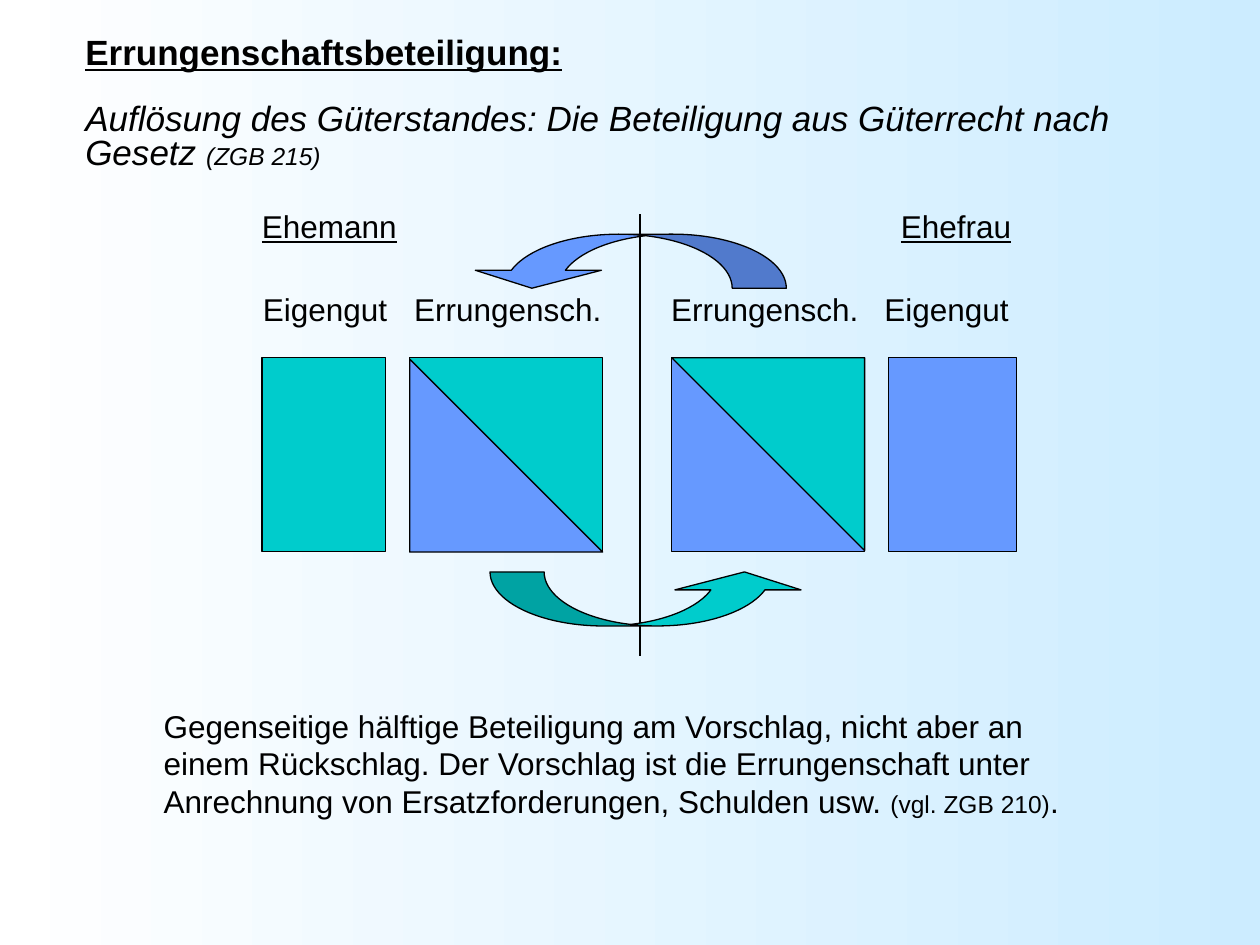
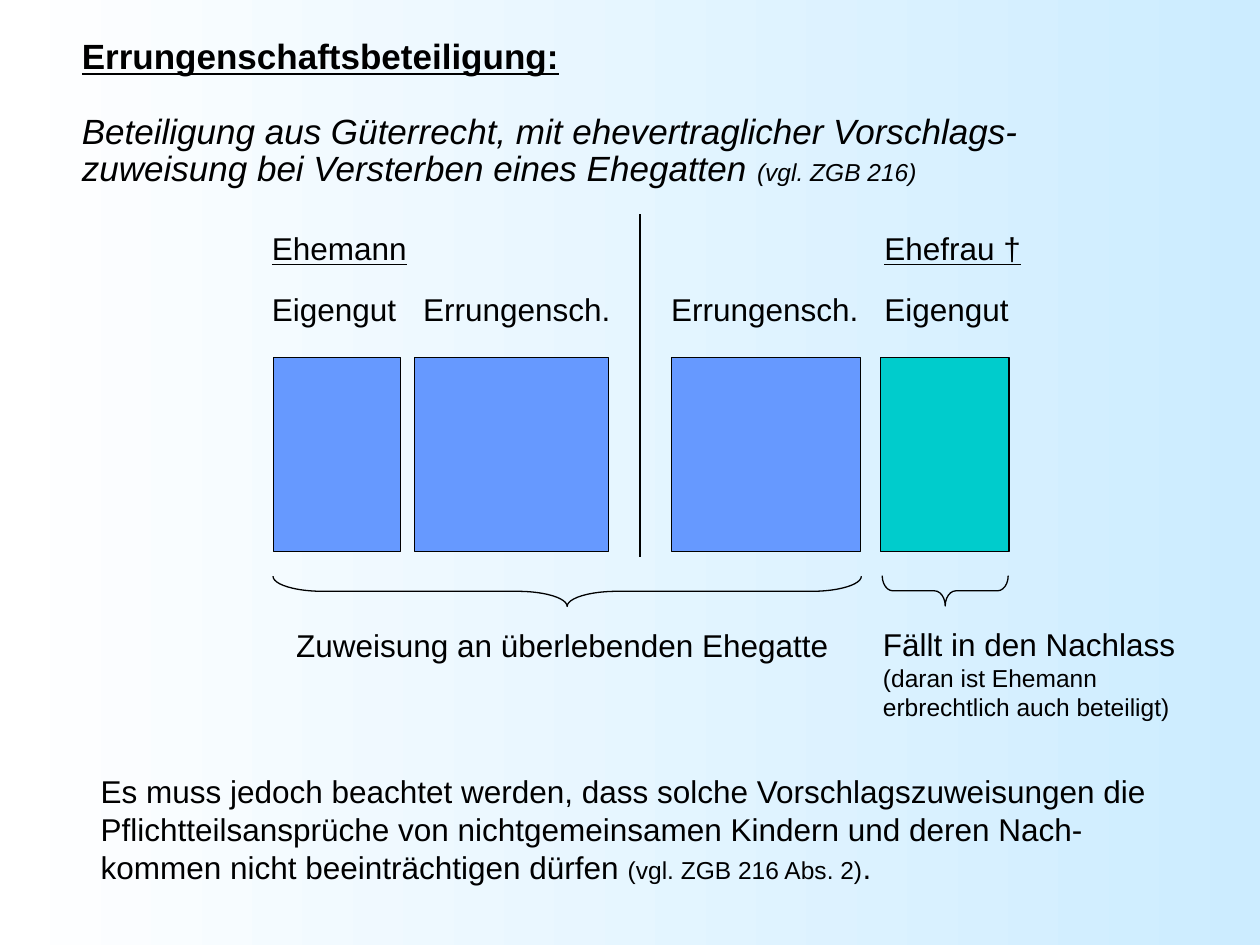
from lxml import etree
from pptx import Presentation
from pptx import util as u
from pptx.dml.color import RGBColor
from pptx.enum import shapes, text
from pptx.oxml.ns import qn

BLACK = RGBColor(0x00, 0x00, 0x00)
WHITE = RGBColor(0xFF, 0xFF, 0xFF)
PALE_BLUE = RGBColor(0xCC, 0xEC, 0xFF)
TEAL = RGBColor(0x00, 0xCC, 0xCC)
BLUE = RGBColor(0x66, 0x99, 0xFF)

FONT = "Arial"
TITLE_SIZE, BODY_SIZE, SMALL_SIZE = 20, 18, 14
LINE_WIDTH = u.Pt(0.75)
ESTATE_TOP, ESTATE_HEIGHT = 7.21, 3.91
LABEL_TOP, LABEL_HEIGHT = 5.72, 1.02
DIVIDER_X, DIVIDER_TOP = 12.9, 4.32
ESTATE_NAMES = ["Eigengut", "Errungensch.", "Errungensch.", "Eigengut"]


def add_text(slide, left, top, width, height, paragraphs):
    """Each paragraph is a list of (text, size, style); style holds letters of "biu"."""
    box = slide.shapes.add_textbox(u.Cm(left), u.Cm(top), u.Cm(width), u.Cm(height))
    frame = box.text_frame
    frame.word_wrap = True
    for index, pieces in enumerate(paragraphs):
        paragraph = frame.add_paragraph() if index else frame.paragraphs[0]
        for wording, size, style in pieces:
            run = paragraph.add_run()
            run.text = wording
            run.font.name = FONT
            run.font.size = u.Pt(size)
            run.font.color.rgb = BLACK
            run.font.bold = "b" in style
            run.font.italic = "i" in style
            run.font.underline = "u" in style
    return frame


def add_outlined(slide, kind, left, top, width, height, fill=None, rotation=0, adjustments=()):
    shape = slide.shapes.add_shape(kind, u.Cm(left), u.Cm(top), u.Cm(width), u.Cm(height))
    shape.shadow.inherit = False
    shape.rotation = rotation
    shape.line.color.rgb = BLACK
    shape.line.width = LINE_WIDTH
    if fill is None:
        shape.fill.background()
    else:
        shape.fill.solid()
        shape.fill.fore_color.rgb = fill
    for index, value in enumerate(adjustments):
        shape.adjustments[index] = value


presentation = Presentation()
presentation.slide_width = u.Cm(25.4)
presentation.slide_height = u.Cm(19.05)

background = presentation.slide_master.background.fill
background.gradient()
background.gradient_angle = 0
for stop, position, colour in zip(background.gradient_stops, (0, 1), (WHITE, PALE_BLUE)):
    stop.position = position
    stop.color.rgb = colour

# What differs between the two slides; estates are (left, width, colour)
pages = [
    {
        "title_box": (1.47, 0.33, 22.94, 3.6),
        "line_spacing": 0.8,
        "subtitle": "Auflösung des Güterstandes: Die Beteiligung aus Güterrecht nach Gesetz ",
        "article": "(ZGB 215)",
        "estates": [(5.28, 2.49, TEAL), (8.26, 3.89, TEAL), (13.54, 3.89, BLUE), (17.91, 2.59, BLUE)],
        "label_lefts": [5.05, 8.1, 13.28, 17.58],
        "spouses": [("Ehemann", 5.03), ("Ehefrau", 17.91)],
        "spouse_top": 4.05,
        "divider_bottom": 13.23,
        "note_box": (3.05, 14.12, 19.71, 2.54),
        "note": "Gegenseitige hälftige Beteiligung am Vorschlag, nicht aber an einem Rückschlag. "
                "Der Vorschlag ist die Errungenschaft unter Anrechnung von Ersatzforderungen, "
                "Schulden usw. ",
        "note_article": "(vgl. ZGB 210)",
    },
    {
        "title_box": (1.4, 0.51, 21.79, 3.6),
        "line_spacing": 0.9,
        "subtitle": "Beteiligung aus Güterrecht, mit ehevertraglicher Vorschlags-zuweisung "
                    "bei Versterben eines Ehegatten ",
        "article": "(vgl. ZGB 216)",
        "estates": [(5.51, 2.57, BLUE), (8.36, 3.91, BLUE), (13.54, 3.81, BLUE), (17.75, 2.59, TEAL)],
        "label_lefts": [5.23, 8.28, 13.28, 17.58],
        "spouses": [("Ehemann", 5.23), ("Ehefrau †", 17.58)],
        "spouse_top": 4.5,
        "divider_bottom": 11.23,
        "note_box": (1.78, 15.44, 21.79, 2.54),
        "note": "Es muss jedoch beachtet werden, dass solche Vorschlagszuweisungen die "
                "Pflichtteilsansprüche von nichtgemeinsamen Kindern und deren Nach-kommen "
                "nicht beeinträchtigen dürfen ",
        "note_article": "(vgl. ZGB 216 Abs. 2)",
    },
]

slides = []
for page in pages:
    slide = presentation.slides.add_slide(presentation.slide_layouts[6])
    slides.append(slide)

    title = add_text(slide, *page["title_box"], [
        [("Errungenschaftsbeteiligung:", TITLE_SIZE, "bu")],
        [(page["subtitle"], TITLE_SIZE, "i"), (page["article"], SMALL_SIZE, "i")],
    ])
    title.vertical_anchor = text.MSO_ANCHOR.MIDDLE
    for paragraph in title.paragraphs:
        paragraph.line_spacing = page["line_spacing"]
    title.paragraphs[1].space_before = u.Pt(23 * page["line_spacing"])

    for left, width, colour in page["estates"]:
        add_outlined(slide, shapes.MSO_SHAPE.RECTANGLE, left, ESTATE_TOP, width, ESTATE_HEIGHT, colour)
    for name, left in zip(ESTATE_NAMES, page["label_lefts"]):
        add_text(slide, left, LABEL_TOP, 5, LABEL_HEIGHT, [[(name, BODY_SIZE, "")]])
    for name, left in page["spouses"]:
        add_text(slide, left, page["spouse_top"], 4, LABEL_HEIGHT, [[(name, BODY_SIZE, "u")]])

    divider = slide.shapes.add_connector(
        shapes.MSO_CONNECTOR.STRAIGHT, u.Cm(DIVIDER_X), u.Cm(DIVIDER_TOP),
        u.Cm(DIVIDER_X), u.Cm(page["divider_bottom"]))
    divider.line.color.rgb = BLACK
    divider.line.width = LINE_WIDTH
    etree.SubElement(divider._element.spPr, qn("a:effectLst"))

    add_text(slide, *page["note_box"], [[
        (page["note"], BODY_SIZE, ""), (page["note_article"], SMALL_SIZE, ""), (".", BODY_SIZE, ""),
    ]])

participation, allocation = slides

# Slide 1: each spouse's half of the other's acquisitions
for left, top, colour, rotation in [(8.26, 7.24, BLUE, 0), (13.54, 7.21, TEAL, 180)]:
    add_outlined(participation, shapes.MSO_SHAPE.RIGHT_TRIANGLE, left, top, 3.89, 3.89, colour, rotation)
for left, top, colour, rotation in [(9.88, 11.53, TEAL, 0), (9.45, 4.72, BLUE, 180)]:
    add_outlined(participation, shapes.MSO_SHAPE.CURVED_UP_ARROW, left, top, 6.4, 1.09,
                 colour, rotation, (1.166, 2.333, 0.333))

# Slide 2: braces showing who receives which estate
for left, top, length, curve in [(11.13, 5.99, 11.86, 1.647), (18.75, 10.64, 2.54, 0.353)]:
    add_outlined(allocation, shapes.MSO_SHAPE.LEFT_BRACE, left, top, 0.61, length,
                 rotation=270, adjustments=(curve, 0.5))
add_text(allocation, 5.72, 12.5, 11.6, LABEL_HEIGHT,
         [[("Zuweisung an überlebenden Ehegatte", BODY_SIZE, "")]])
add_text(allocation, 17.55, 12.47, 6.7, 2.21, [
    [("Fällt in den Nachlass", BODY_SIZE, "")],
    [("(daran ist Ehemann erbrechtlich auch beteiligt)", SMALL_SIZE, "")],
])

presentation.save("out.pptx")
